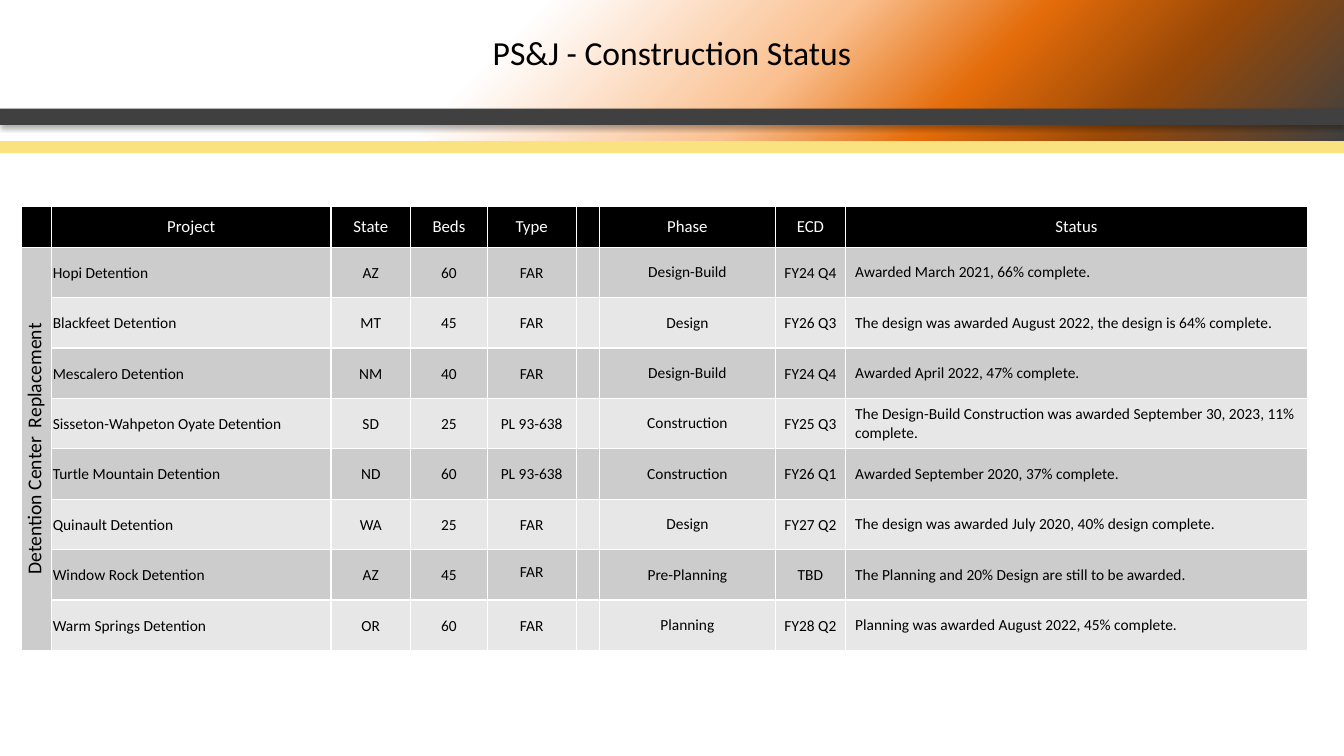
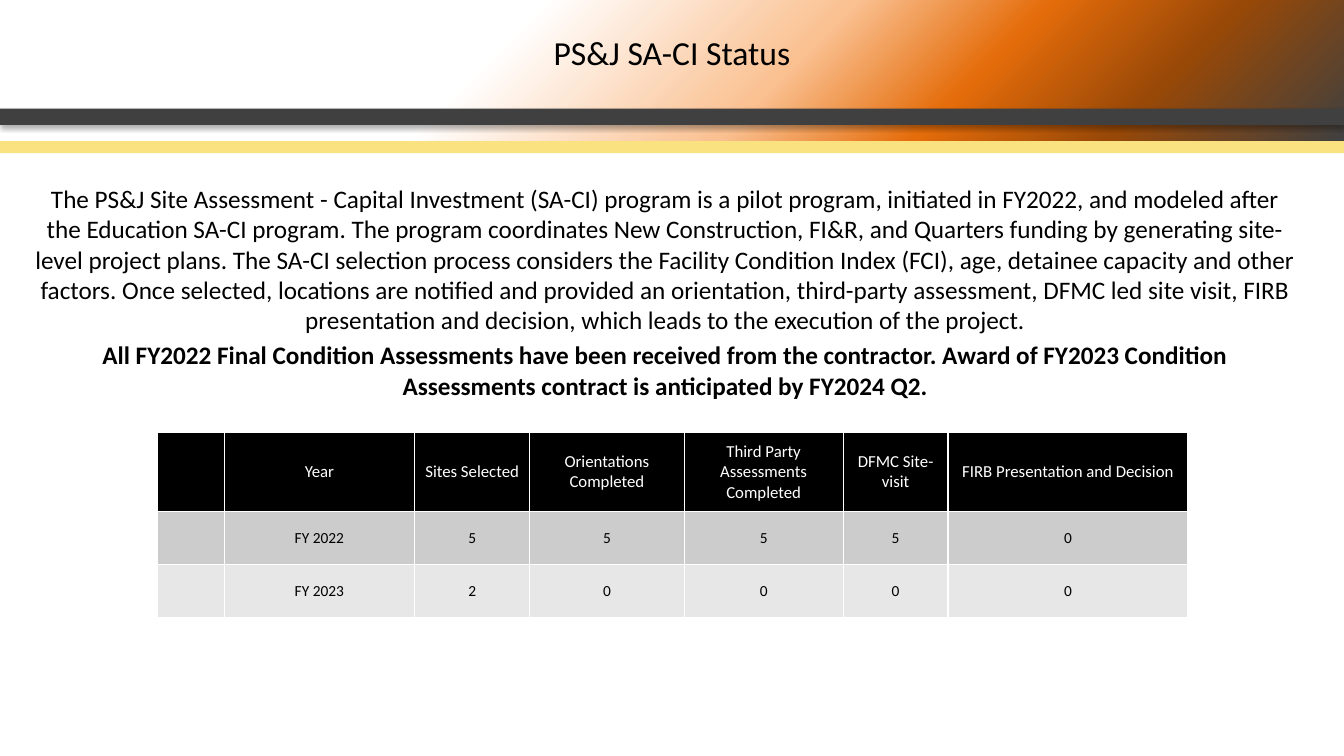
import dataclasses

import pptx
import pptx.dml.color
import pptx.enum.shapes
import pptx.enum.text
import pptx.oxml
import pptx.oxml.ns
import pptx.util
from pptx.util import Cm

ALIGN = pptx.enum.text.PP_ALIGN
ANCHOR = pptx.enum.text.MSO_ANCHOR


@dataclasses.dataclass(frozen=True)
class Theme:
    """Colours, fonts and sizes shared by the slides."""
    font: str = "Calibri"
    ink: str = "000000"
    paper: str = "FFFFFF"
    charcoal: str = "404040"
    gold: str = "F9E27F"
    stripes: tuple = ("CCCCCC", "E7E7E7")
    banner: tuple = ((0, "404040"), (16, "984807"), (29, "E46C0A"),
                     (42, "FAC090"), (63, "FFFFFF"), (100, "FFFFFF"))
    title_size: int = 24
    body_size: int = 18
    side_size: int = 14
    header_size: int = 12
    cell_size: int = 11
    rule_width: int = 1


THEME = Theme()
SLIDE_WIDTH, SLIDE_HEIGHT = 33.87, 19.05
TIGHT = {"margin_left": Cm(0.03), "margin_right": Cm(0.03),
         "margin_top": Cm(0.03), "margin_bottom": Cm(0)}

CONSTRUCTION = {
    "header": ("", "Project", "State", "Beds", "Type", "", "Phase", "ECD", "Status"),
    "rows": (
        ("Detention Center  Replacement", "Hopi Detention", "AZ", "60", "FAR", "",
         "Design-Build", "FY24 Q4", "Awarded March 2021, 66% complete."),
        ("", "Blackfeet Detention", "MT", "45", "FAR", "", "Design", "FY26 Q3",
         "The design was awarded August 2022, the design is 64% complete."),
        ("", "Mescalero Detention", "NM", "40", "FAR", "", "Design-Build", "FY24 Q4",
         "Awarded April 2022, 47% complete."),
        ("", "Sisseton-Wahpeton Oyate Detention", "SD", "25", "PL 93-638", "",
         "Construction", "FY25 Q3",
         "The Design-Build Construction was awarded September 30, 2023, 11% complete."),
        ("", "Turtle Mountain Detention", "ND", "60", "PL 93-638", "", "Construction",
         "FY26 Q1", "Awarded September 2020, 37% complete."),
        ("", "Quinault Detention", "WA", "25", "FAR", "", "Design", "FY27 Q2",
         "The design was awarded July 2020, 40% design complete."),
        ("", "Window Rock Detention", "AZ", "45", "FAR", "", "Pre-Planning", "TBD",
         "The Planning and 20% Design are still to be awarded."),
        ("", "Warm Springs Detention", "OR", "60", "FAR", "", "Planning", "FY28 Q2",
         "Planning was awarded August 2022, 45% complete."),
    ),
    "widths": (0.76, 7.04, 2.01, 1.93, 2.24, 0.58, 4.45, 1.75, 11.66),
    "heights": (1.02, 1.27),
    "left_columns": (1, 8),
    "roomy_columns": (6, 8),
}
ASSESSMENTS = {
    "header": ("", "Year", "Sites Selected", "Orientations Completed",
               "Third Party Assessments Completed", "DFMC Site-visit",
               "FIRB Presentation and Decision"),
    "rows": (("", "FY 2022", "5", "5", "5", "5", "0"),
             ("", "FY 2023", "2", "0", "0", "0", "0")),
    "widths": (1.68, 4.8, 2.9, 3.89, 4.01, 2.64, 6.05),
    "heights": (1.98, 1.34),
    "left_columns": (),
    "roomy_columns": (5,),
}
PROGRAM = (
    "The PS&J Site Assessment - Capital Investment (SA-CI) program is a pilot program, "
    "initiated in FY2022, and modeled after the Education SA-CI program. The program "
    "coordinates New Construction, FI&R, and Quarters funding by generating site-level "
    "project plans. The SA-CI selection process considers the Facility Condition Index "
    "(FCI), age, detainee capacity and other factors. Once selected, locations are "
    "notified and provided an orientation, third-party assessment, DFMC led site visit, "
    "FIRB presentation and decision, which leads to the execution of the project."
)
PROGRESS = (
    "All FY2022 Final Condition Assessments have been received from the contractor. "
    "Award of FY2023 Condition Assessments contract is anticipated by FY2024 Q2."
)


def apply(target, formats):
    """Set each named format value on the target."""
    for name, value in formats.items():
        setattr(target, name, value)


def rgb(colour):
    """Turn a hex string into a colour."""
    return pptx.dml.color.RGBColor.from_string(colour)


def write(paragraph, text, size, colour=THEME.ink, bold=False, align=ALIGN.CENTER):
    """Write one run of themed text into a paragraph."""
    paragraph.alignment = align
    run = paragraph.add_run()
    run.text = text
    apply(run.font, {"name": THEME.font, "size": pptx.util.Pt(size), "bold": bold})
    run.font.color.rgb = rgb(colour)


def drawing_xml(markup):
    """Parse a fragment of DrawingML."""
    tag, rest = markup.split(" ", 1)
    return pptx.oxml.parse_xml(f"{tag} {pptx.oxml.ns.nsdecls('a')} {rest}")


def add_bar(slide, box, colour):
    """Add a plain rectangle without outline or shadow."""
    bar = slide.shapes.add_shape(
        pptx.enum.shapes.MSO_SHAPE.RECTANGLE, *(Cm(length) for length in box))
    bar.fill.solid()
    bar.fill.fore_color.rgb = rgb(colour)
    bar.line.fill.background()
    bar.shadow.inherit = False
    return bar


def add_banner(slide, box):
    """Add the gradient banner as a quarter-turned rectangle filling the box."""
    left, top, width, height = box
    shift = (width - height) / 2
    banner = add_bar(slide, (left + shift, top - shift, height, width), THEME.paper)
    banner.rotation = 90
    stops = "".join(f'<a:gs pos="{place * 1000}"><a:srgbClr val="{colour}"/></a:gs>'
                    for place, colour in THEME.banner)
    gradient = drawing_xml(
        f'<a:gradFill rotWithShape="1"><a:gsLst>{stops}</a:gsLst><a:path path="circle">'
        '<a:fillToRect l="100000" t="100000"/></a:path></a:gradFill>')
    properties = banner._element.spPr
    properties.replace(properties.find(pptx.oxml.ns.qn("a:solidFill")), gradient)


def add_heading(slide, title, box):
    """Add the banner, its two bars and the slide title."""
    left, top, width, height = box
    add_banner(slide, (left, top - 0.11, width, height - 0.21))
    dark_bar = add_bar(slide, (left, top + 2.74, width, 0.41), THEME.charcoal)
    effects = dark_bar._element.spPr.find(pptx.oxml.ns.qn("a:effectLst"))
    effects.append(drawing_xml(
        '<a:outerShdw blurRad="44450" dist="27940" dir="5400000">'
        '<a:srgbClr val="000000"><a:alpha val="32000"/></a:srgbClr></a:outerShdw>'))
    add_bar(slide, (left, top + 3.56, width, 0.3), THEME.gold)
    add_text(slide, (left, top, width, 2.64), ((title, THEME.title_size, False),),
             ANCHOR.MIDDLE)


def add_text(slide, box, passages, anchor=ANCHOR.TOP):
    """Add a wrapped box of centred passages."""
    frame = slide.shapes.add_textbox(*(Cm(length) for length in box)).text_frame
    apply(frame, {"word_wrap": True, "vertical_anchor": anchor})
    for index, (text, size, bold) in enumerate(passages):
        paragraph = frame.add_paragraph() if index else frame.paragraphs[0]
        if index:
            paragraph.space_before = pptx.util.Pt(size * 0.2)
        write(paragraph, text, size, bold=bold)


def paint_cell(cell, colour):
    """Give a cell its thin white borders and fill."""
    properties = cell._tc.get_or_add_tcPr()
    for side in "LRTB":
        properties.append(drawing_xml(
            f'<a:ln{side} w="{pptx.util.Pt(THEME.rule_width)}"><a:solidFill>'
            f'<a:srgbClr val="{THEME.paper}"/></a:solidFill></a:ln{side}>'))
    cell.fill.solid()
    cell.fill.fore_color.rgb = rgb(colour)


def add_status_table(slide, left, top, content):
    """Add a table with a black header and striped rows."""
    records = (content["header"], *content["rows"])
    header_height, row_height = content["heights"]
    heights = [header_height] + [row_height] * len(content["rows"])
    widths = content["widths"]
    table = slide.shapes.add_table(
        len(records), len(widths), Cm(left), Cm(top),
        Cm(sum(widths)), Cm(sum(heights))).table
    for column, width in zip(table.columns, widths):
        column.width = Cm(width)
    for row, (height, record) in enumerate(zip(heights, records)):
        table.rows[row].height = Cm(height)
        for column, text in enumerate(record):
            cell = table.cell(row, column)
            paint_cell(cell, THEME.stripes[(row - 1) % 2] if row else THEME.ink)
            cell.vertical_anchor = ANCHOR.MIDDLE
            if not text or row and column not in content["roomy_columns"]:
                apply(cell, TIGHT)
            if not text:
                continue
            paragraph = cell.text_frame.paragraphs[0]
            if row == 0:
                write(paragraph, text, THEME.header_size, THEME.paper)
            elif column == 0:
                write(paragraph, text, THEME.side_size)
            else:
                write(paragraph, text, THEME.cell_size, align=(
                    ALIGN.LEFT if column in content["left_columns"] else ALIGN.CENTER))
    return table


def build_construction(slide):
    """Build the slide of construction projects."""
    add_heading(slide, "PS&J - Construction Status", (0, 0, SLIDE_WIDTH, 3.87))
    table = add_status_table(slide, 0.54, 5.21, CONSTRUCTION)
    category = table.cell(1, 0)
    category.merge(table.cell(len(CONSTRUCTION["rows"]), 0))
    category._tc.get_or_add_tcPr().set("vert", "vert270")
    apply(table.cell(7, 4), {"vertical_anchor": ANCHOR.BOTTOM, "margin_bottom": Cm(0.47)})


def build_assessments(slide):
    """Build the slide on the site assessment program."""
    add_heading(slide, "PS&J SA-CI Status", (0, 0, SLIDE_WIDTH, 3.87))
    add_text(slide, (0.61, 4.5, 32.31, 4.01),
             ((PROGRAM, THEME.body_size, False), (PROGRESS, THEME.body_size, True)))
    add_status_table(slide, 3.97, 10.9, ASSESSMENTS)


def main():
    """Build and save the presentation."""
    deck = pptx.Presentation()
    apply(deck, {"slide_width": Cm(SLIDE_WIDTH), "slide_height": Cm(SLIDE_HEIGHT)})
    for build in (build_construction, build_assessments):
        build(deck.slides.add_slide(deck.slide_layouts[6]))
    deck.save("out.pptx")


if __name__ == "__main__":
    main()
